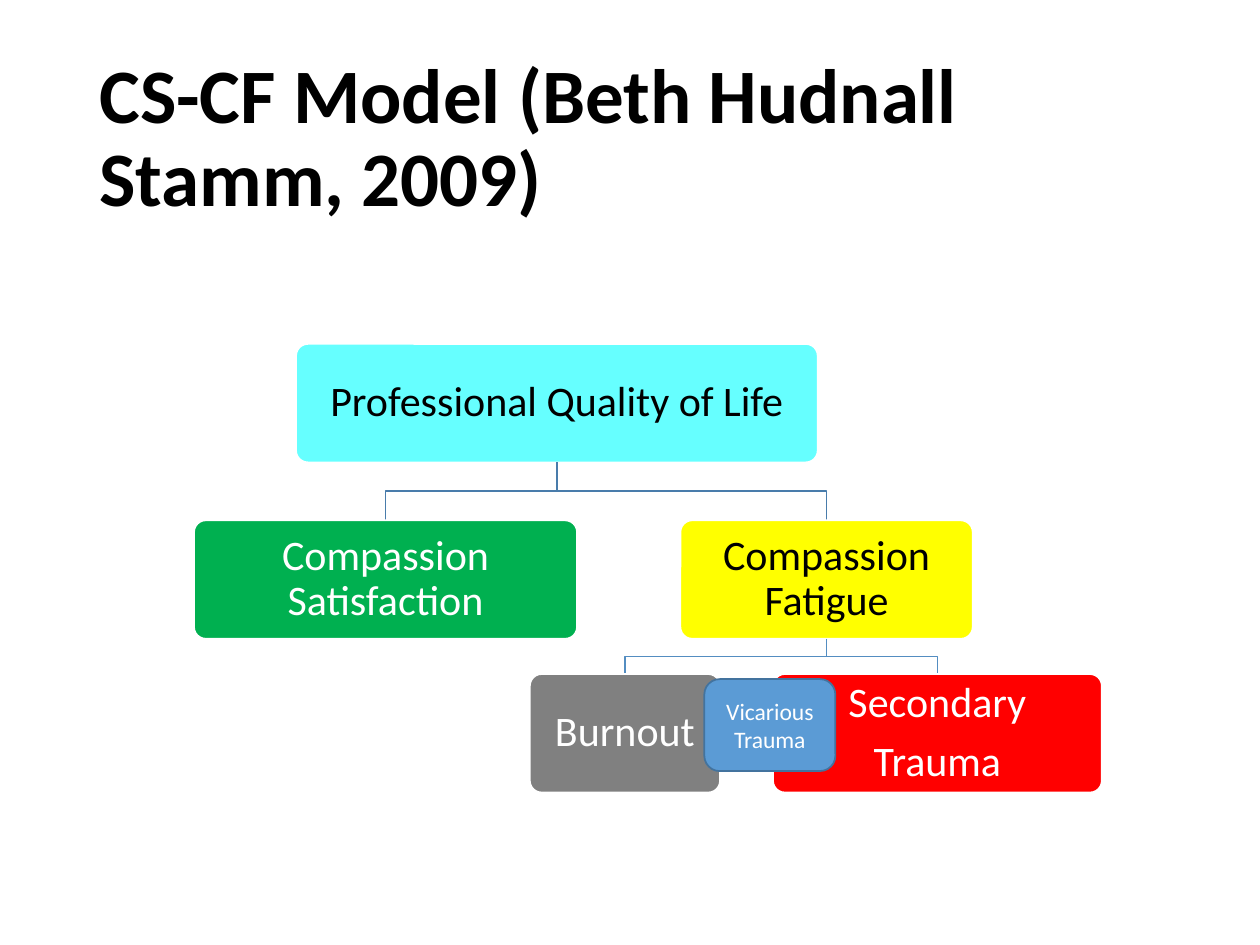
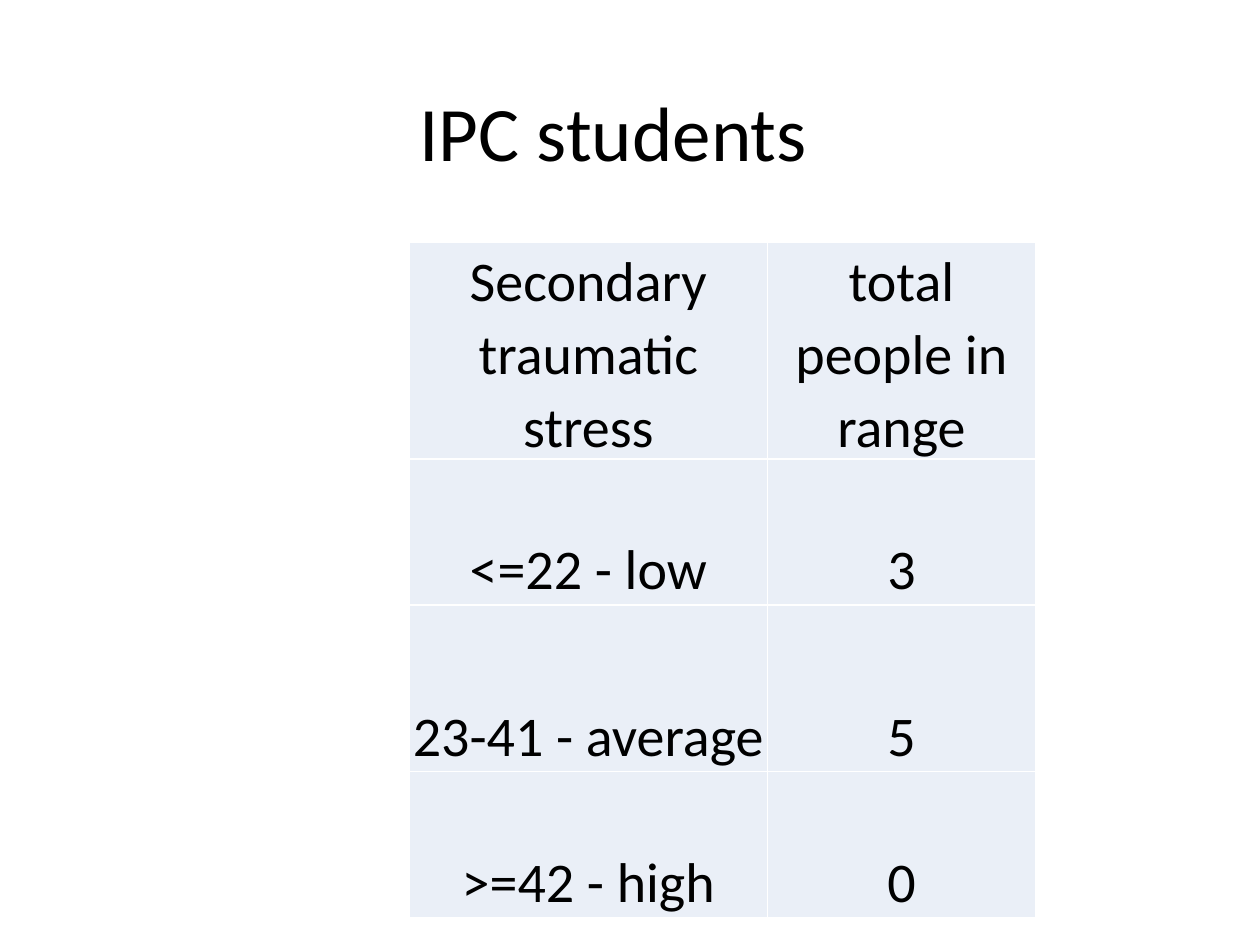
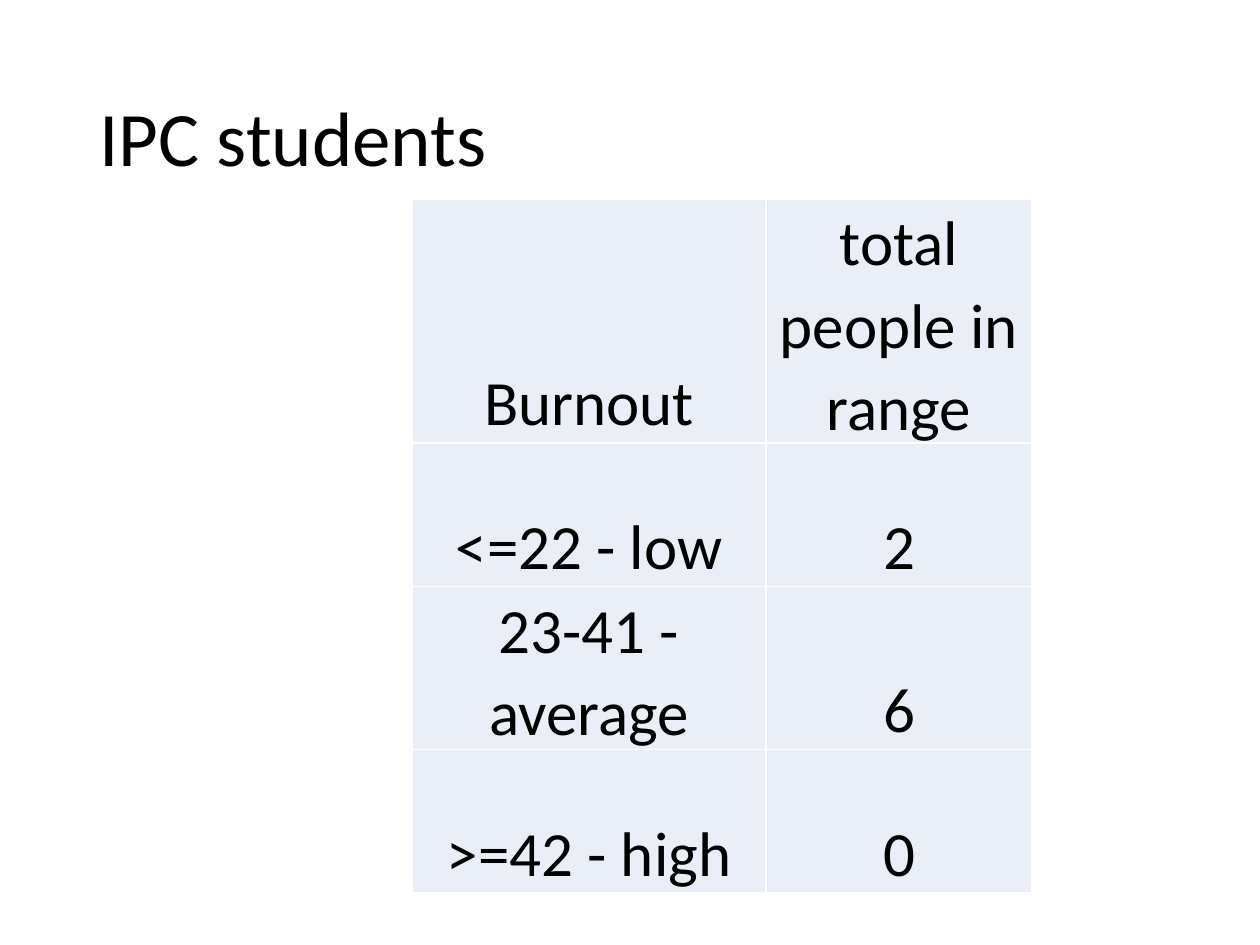
from dataclasses import dataclass

from lxml.etree import SubElement
from pptx import Presentation
from pptx.dml.color import RGBColor
from pptx.enum.shapes import MSO_SHAPE
from pptx.enum.text import MSO_ANCHOR, PP_ALIGN
from pptx.oxml.ns import qn
from pptx.util import Inches, Pt


@dataclass(frozen=True)
class Theme:
    font: str = "Calibri"
    black: str = "000000"
    white: str = "FFFFFF"
    cyan: str = "66FFFF"
    green: str = "00B050"
    yellow: str = "FFFF00"
    gray: str = "808080"
    red: str = "FF0000"
    blue: str = "5B9BD5"
    blue_edge: str = "43739E"
    upper_link: str = "497CAB"
    lower_link: str = "538DC1"
    cell: str = "EAEFF7"
    title_size: float = 44
    node_size: float = 24
    overlap_size: float = 13.5
    line: float = 1


THEME = Theme()

TITLE_BOX = (0.69, 0.4, 8.62, 1.45)
MODEL_TITLE = "CS-CF Model (Beth Hudnall Stamm, 2009)"
LEVEL_TOPS = (2.73, 4.13, 5.35)
LEVEL_LINKS = (None, THEME.upper_link, THEME.lower_link)
NODE_HEIGHT = 0.94
NODES = {
    "life": (["Professional Quality of Life"], None, 0, 4.42, 4.14, THEME.cyan, THEME.black),
    "satisfaction": (["Compassion Satisfaction"], "life", 1, 3.06, 3.04, THEME.green, THEME.white),
    "fatigue": (["Compassion Fatigue"], "life", 1, 6.56, 2.32, THEME.yellow, THEME.black),
    "burnout": (["Burnout"], "fatigue", 2, 4.96, 1.51, THEME.gray, THEME.white),
    "secondary": (["Secondary", "Trauma"], "fatigue", 2, 7.44, 2.61, THEME.red, THEME.white),
}
OVERLAP = ("Vicarious Trauma", (5.59, 5.39, 1.04, 0.73))

RANGES = ("<=22 - low", "23-41 - average", ">=42 - high")
RESULTS = [
    {
        "title_box": (3.23, 0.42, 5.25, 1.33),
        "measure": "Secondary traumatic stress",
        "counts": (3, 5, 0),
        "origin": (3.25, 1.92),
        "columns": (2.84, 2.13),
        "rows": (1.27, 1.16, 1.32, 1.16),
        "size": 32,
    },
    {
        "title_box": TITLE_BOX,
        "measure": "Burnout",
        "counts": (2, 6, 0),
        "origin": (3.27, 1.58),
        "columns": (2.81, 2.11),
        "rows": (1.29, 1.14, 1.29, 1.14),
        "size": 36,
    },
]


def inches(lengths):
    return [Inches(length) for length in lengths]


def rgb(color):
    return RGBColor.from_string(color)


def write(frame, lines, size, color, align=PP_ALIGN.CENTER, spacing=None, after=None, bold=False):
    frame.word_wrap = True
    for number, line in enumerate(lines):
        paragraph = frame.add_paragraph() if number else frame.paragraphs[0]
        paragraph.text = line
        paragraph.alignment = align
        paragraph.line_spacing = spacing
        paragraph.space_after = after
        font = paragraph.font
        font.name, font.size, font.bold = THEME.font, Pt(size), bold
        font.color.rgb = rgb(color)


def add_title(slide, text, box, anchor=MSO_ANCHOR.MIDDLE, bold=False):
    frame = slide.shapes.add_textbox(*inches(box)).text_frame
    frame.vertical_anchor = anchor
    write(frame, [text], THEME.title_size, THEME.black, PP_ALIGN.LEFT, 0.9, bold=bold)


def add_box(slide, box, fill, edge):
    shape = slide.shapes.add_shape(MSO_SHAPE.ROUNDED_RECTANGLE, *inches(box))
    shape.shadow.inherit = False
    shape.fill.solid()
    shape.fill.fore_color.rgb = rgb(fill)
    shape.line.color.rgb = rgb(edge)
    shape.line.width = Pt(THEME.line)
    shape.text_frame.vertical_anchor = MSO_ANCHOR.MIDDLE
    return shape


def add_link(slide, parent, child):
    parent_level, parent_x = NODES[parent][2:4]
    level, child_x = NODES[child][2:4]
    top, bottom = LEVEL_TOPS[parent_level] + NODE_HEIGHT, LEVEL_TOPS[level]
    bend = (top + bottom) / 2
    builder = slide.shapes.build_freeform(Inches(parent_x), Inches(top))
    turns = [(parent_x, bend), (child_x, bend), (child_x, bottom)]
    builder.add_line_segments([inches(turn) for turn in turns], close=False)
    link = builder.convert_to_shape()
    link.shadow.inherit = False
    link.fill.background()
    link.line.color.rgb = rgb(LEVEL_LINKS[level])
    link.line.width = Pt(THEME.line)


def build_model(slide):
    add_title(slide, MODEL_TITLE, TITLE_BOX, MSO_ANCHOR.TOP, bold=True)
    for name, (lines, parent, level, center, width, fill, ink) in NODES.items():
        if parent:
            add_link(slide, parent, name)
        box = (center - width / 2, LEVEL_TOPS[level], width, NODE_HEIGHT)
        node = add_box(slide, box, fill, THEME.white)
        node.adjustments[0] = 0.1
        frame = node.text_frame
        frame.margin_top = frame.margin_bottom = Inches(0.1)
        write(frame, lines, THEME.node_size, ink, spacing=0.9, after=Pt(8))
    label, box = OVERLAP
    overlap = add_box(slide, box, THEME.blue, THEME.blue_edge)
    write(overlap.text_frame, [label], THEME.overlap_size, THEME.white)


def style_cell(cell):
    properties = cell._tc.get_or_add_tcPr()
    for side in ("lnL", "lnR", "lnT", "lnB"):
        border = SubElement(properties, qn(f"a:{side}"), w=str(Pt(THEME.line)))
        fill = SubElement(border, qn("a:solidFill"))
        SubElement(fill, qn("a:srgbClr"), val=THEME.white)
    cell.fill.solid()
    cell.fill.fore_color.rgb = rgb(THEME.cell)
    cell.vertical_anchor = MSO_ANCHOR.BOTTOM
    cell.margin_left = cell.margin_right = cell.margin_top = Inches(0.01)
    cell.margin_bottom = 0


def build_result(slide, result):
    add_title(slide, "IPC students", result["title_box"])
    records = [(result["measure"], "total people in range"), *zip(RANGES, result["counts"])]
    columns, rows = result["columns"], result["rows"]
    extent = (*result["origin"], sum(columns), sum(rows))
    table = slide.shapes.add_table(len(rows), len(columns), *inches(extent)).table
    table.first_row = table.horz_banding = False
    for column, width in zip(table.columns, columns):
        column.width = Inches(width)
    for row, height, record in zip(table.rows, rows, records):
        row.height = Inches(height)
        for cell, value in zip(row.cells, record):
            style_cell(cell)
            write(cell.text_frame, [str(value)], result["size"], THEME.black,
                  spacing=1.07, after=Pt(8))


def main():
    deck = Presentation()
    deck.slide_width, deck.slide_height = Inches(10), Inches(7.5)
    blank = deck.slide_layouts[6]
    build_model(deck.slides.add_slide(blank))
    for result in RESULTS:
        build_result(deck.slides.add_slide(blank), result)
    deck.save("out.pptx")


if __name__ == "__main__":
    main()
